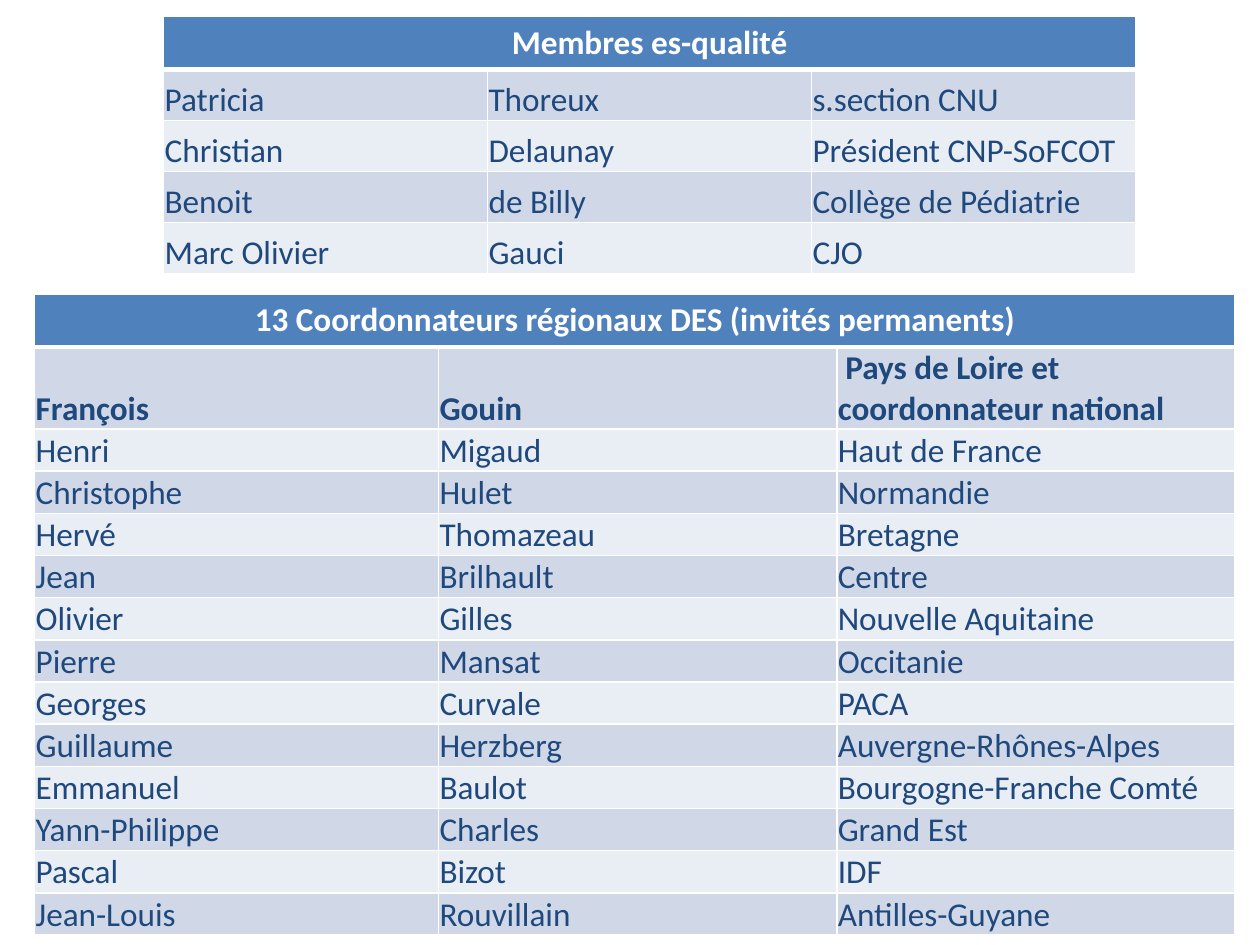
"""Build the slide listing ex officio members and regional DES coordinators."""
from lxml import etree
from pptx import Presentation
from pptx import util as u
from pptx.dml.color import RGBColor
from pptx.enum import text
from pptx.oxml import ns

WHITE = RGBColor(0xFF, 0xFF, 0xFF)
NAVY = RGBColor(0x1F, 0x49, 0x7D)
HEADER_BLUE = RGBColor(0x4F, 0x81, 0xBD)
BANDS = (RGBColor(0xD0, 0xD8, 0xE8), RGBColor(0xE9, 0xED, 0xF4))
FONT, FONT_SIZE = "Calibri", 19

MEMBERS = {
    "title": "Membres es-qualité",
    "position": (3.3, 0.33),
    "columns": [6.53] * 3,
    "heights": [1.03] * 5,
    "bold_rows": {0},
    "people": [
        ("Patricia", "Thoreux", "s.section CNU"),
        ("Christian", "Delaunay", "Président CNP-SoFCOT"),
        ("Benoit", "de Billy", "Collège de Pédiatrie"),
        ("Marc Olivier", "Gauci", "CJO"),
    ],
}
COORDINATORS = {
    "title": "13 Coordonnateurs régionaux DES (invités permanents)",
    "position": (0.7, 5.93),
    "columns": [8.14, 8.03, 8.03],
    "heights": [1.03, 1.65] + [0.85] * 12,
    "bold_rows": {0, 1},
    "people": [
        ("François", "Gouin", " Pays de Loire et coordonnateur national"),
        ("Henri", "Migaud", "Haut de France"),
        ("Christophe", "Hulet", "Normandie"),
        ("Hervé", "Thomazeau", "Bretagne"),
        ("Jean", "Brilhault", "Centre"),
        ("Olivier", "Gilles", "Nouvelle Aquitaine"),
        ("Pierre", "Mansat", "Occitanie"),
        ("Georges", "Curvale", "PACA"),
        ("Guillaume", "Herzberg", "Auvergne-Rhônes-Alpes"),
        ("Emmanuel", "Baulot", "Bourgogne-Franche Comté"),
        ("Yann-Philippe", "Charles", "Grand Est"),
        ("Pascal", "Bizot", "IDF"),
        ("Jean-Louis", "Rouvillain", "Antilles-Guyane"),
    ],
}


def set_borders(cell, row):
    """Draw white cell borders, thicker under the header row."""
    widths = {"L": 1, "R": 1, "T": 3 if row == 1 else 1, "B": 3 if row == 0 else 1}
    properties = cell._tc.get_or_add_tcPr()
    for side, width in widths.items():
        line = etree.SubElement(properties, ns.qn(f"a:ln{side}"), w=str(u.Pt(width)))
        fill = etree.SubElement(line, ns.qn("a:solidFill"))
        etree.SubElement(fill, ns.qn("a:srgbClr"), val=str(WHITE))


def style_cell(cell, row, bold):
    """Apply the border, fill, anchor, margins and font of a table row."""
    set_borders(cell, row)
    cell.fill.solid()
    cell.fill.fore_color.rgb = BANDS[(row - 1) % 2] if row else HEADER_BLUE
    if row:
        cell.vertical_anchor = text.MSO_ANCHOR.BOTTOM
        cell.margin_left = cell.margin_right = cell.margin_top = u.Cm(0.02)
        cell.margin_bottom = 0
    paragraph = cell.text_frame.paragraphs[0]
    paragraph.alignment = text.PP_ALIGN.LEFT if row else text.PP_ALIGN.CENTER
    for run in paragraph.runs:
        run.font.name = FONT
        run.font.size = u.Pt(FONT_SIZE)
        run.font.bold = bold
        run.font.color.rgb = NAVY if row else WHITE


def add_people_table(slide, group):
    """Add a titled table of people to the slide."""
    columns, heights = group["columns"], group["heights"]
    left, top = group["position"]
    table = slide.shapes.add_table(
        len(heights), len(columns), u.Cm(left), u.Cm(top),
        u.Cm(sum(columns)), u.Cm(sum(heights))).table
    for column, width in zip(table.columns, columns):
        column.width = u.Cm(width)
    for row, height in zip(table.rows, heights):
        row.height = u.Cm(height)
    table.cell(0, 0).merge(table.cell(0, len(columns) - 1))
    for row, values in enumerate([(group["title"], "", "")] + group["people"]):
        for column, value in enumerate(values):
            cell = table.cell(row, column)
            cell.text_frame.text = value
            style_cell(cell, row, row in group["bold_rows"])


def main():
    """Create and save the presentation."""
    presentation = Presentation()
    presentation.slide_width, presentation.slide_height = u.Cm(25.4), u.Cm(19.05)
    slide = presentation.slides.add_slide(presentation.slide_layouts[6])
    for group in (MEMBERS, COORDINATORS):
        add_people_table(slide, group)
    presentation.save("out.pptx")


if __name__ == "__main__":
    main()
